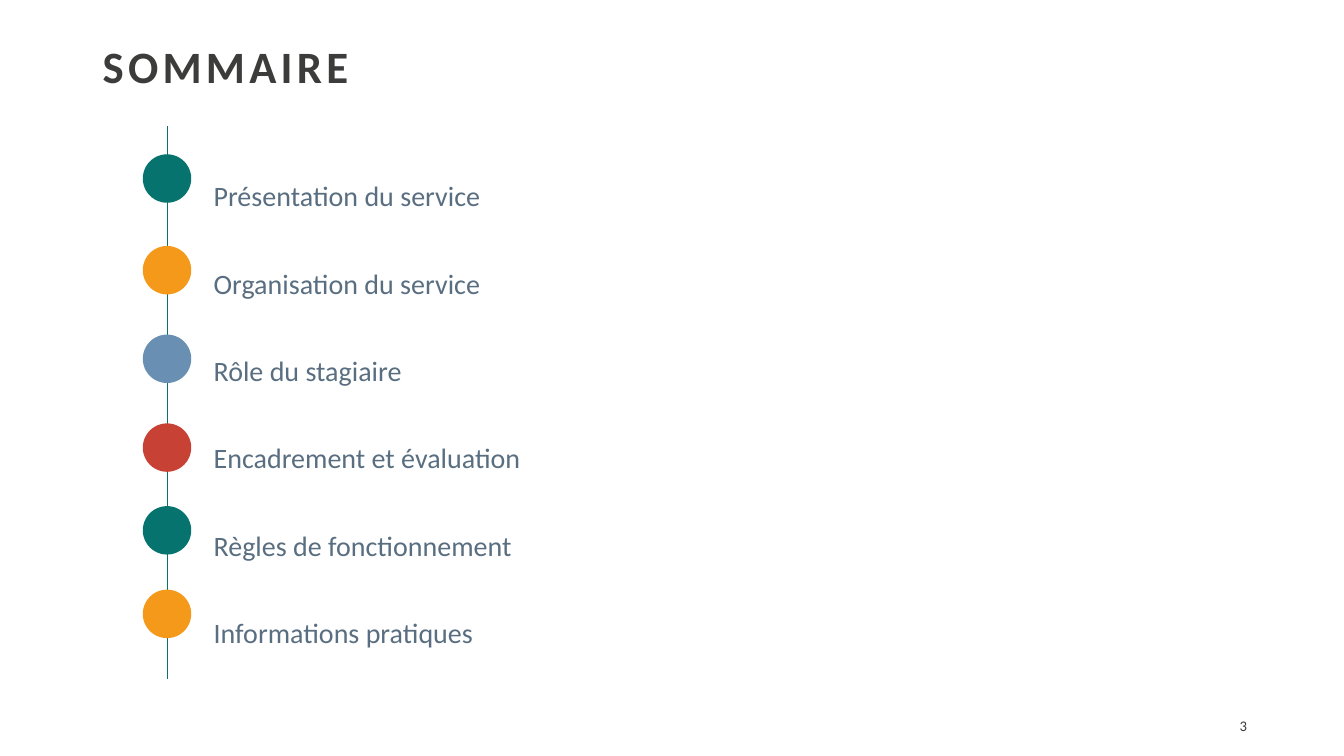
import pptx
import pptx.util
import pptx.dml.color
import pptx.enum.shapes
import pptx.enum.text
import pptx.oxml.ns
import lxml.etree

Pt = pptx.util.Pt
Align = pptx.enum.text.PP_ALIGN
Anchor = pptx.enum.text.MSO_ANCHOR
Fit = pptx.enum.text.MSO_AUTO_SIZE

# Content
TITLE = "SOMMAIRE"
PAGE_NUMBER = "3"
# Section name, marker top in points, marker colour
SECTIONS = [
    ("Présentation du service", 110.2, "07736E"),
    ("Organisation du service", 175.7, "F4991A"),
    ("Rôle du stagiaire", 239, "698FB2"),
    ("Encadrement et évaluation", 302.4, "C84135"),
    ("Règles de fonctionnement", 361.5, "07736E"),
    ("Informations pratiques", 421.2, "F4991A"),
]

# Layout, in points
AXIS_X, AXIS_TOP, AXIS_BOTTOM = 119.3, 90, 485.3
MARKER_SIZE = 34.6
TITLE_BOX = (66.2, 28.8, 432.7, 41)
LIST_BOX = (145.4, 85.7, 599, 375.1)
NUMBER_BOX = (846, 504, 51.8, 28.8)

# Formats
TITLE_FORMAT = {
    "frame": {"vertical_anchor": Anchor.MIDDLE, "auto_size": Fit.NONE},
    "para": {"alignment": Align.LEFT, "line_spacing": 0.9},
    "font": {"size": Pt(32), "bold": True},
    "color": "3C3C3B",
}
LIST_FORMAT = {
    "frame": {"vertical_anchor": Anchor.TOP, "auto_size": Fit.SHAPE_TO_FIT_TEXT},
    "para": {"alignment": Align.JUSTIFY, "line_spacing": 2.6},
    "font": {"size": Pt(20)},
    "color": "596E80",
}
NUMBER_FORMAT = {
    "frame": {"vertical_anchor": Anchor.MIDDLE},
    "para": {"alignment": Align.RIGHT},
    "font": {"size": Pt(10.5)},
    "color": "3C3C3B",
}


def rgb(value):
    return pptx.dml.color.RGBColor.from_string(value)


def set_all(target, values):
    for name, value in values.items():
        setattr(target, name, value)


def add_element(parent, tag):
    return lxml.etree.SubElement(parent, pptx.oxml.ns.qn(tag))


def write(box, place, lines, style):
    box.left, box.top, box.width, box.height = map(Pt, place)
    frame = box.text_frame
    set_all(frame, {"word_wrap": True, **style["frame"]})
    for index, line in enumerate(lines):
        para = frame.paragraphs[0] if index == 0 else frame.add_paragraph()
        set_all(para, {"space_before": Pt(0), "space_after": Pt(0), **style["para"]})
        span = para.add_run()
        span.text = line
        set_all(span.font, {"name": "Calibri", **style["font"]})
        span.font.color.rgb = rgb(style["color"])


def main():
    deck = pptx.Presentation()
    deck.slide_width, deck.slide_height = Pt(960), Pt(540)
    page = deck.slides.add_slide(deck.slide_layouts[1])

    # Title with wide letter spacing
    title = page.shapes.title
    write(title, TITLE_BOX, [TITLE], TITLE_FORMAT)
    title.text_frame.paragraphs[0].runs[0].font._element.set("spc", "300")

    # Section list without bullets
    sections = page.placeholders[1]
    write(sections, LIST_BOX, [name for name, _, _ in SECTIONS], LIST_FORMAT)
    for para in sections.text_frame.paragraphs:
        properties = para._p.get_or_add_pPr()
        properties.set("marL", "0")
        properties.set("indent", "0")
        add_element(properties, "a:buNone")

    # Page number
    number = page.shapes.add_textbox(*map(Pt, NUMBER_BOX))
    write(number, NUMBER_BOX, [PAGE_NUMBER], NUMBER_FORMAT)

    # Vertical axis
    axis = page.shapes.add_connector(
        pptx.enum.shapes.MSO_CONNECTOR.STRAIGHT,
        Pt(AXIS_X), Pt(AXIS_TOP), Pt(AXIS_X), Pt(AXIS_BOTTOM))
    axis.line.color.rgb = rgb("07736E")
    axis.line.width = Pt(0.5)
    add_element(axis._element.spPr, "a:effectLst")

    # Round markers centred on the axis
    for _, top, color in SECTIONS:
        marker = page.shapes.add_shape(
            pptx.enum.shapes.MSO_SHAPE.OVAL,
            Pt(AXIS_X - MARKER_SIZE / 2), Pt(top), Pt(MARKER_SIZE), Pt(MARKER_SIZE))
        marker.shadow.inherit = False
        marker.fill.solid()
        marker.fill.fore_color.rgb = rgb(color)
        marker.line.fill.background()

    deck.save("out.pptx")


if __name__ == "__main__":
    main()
